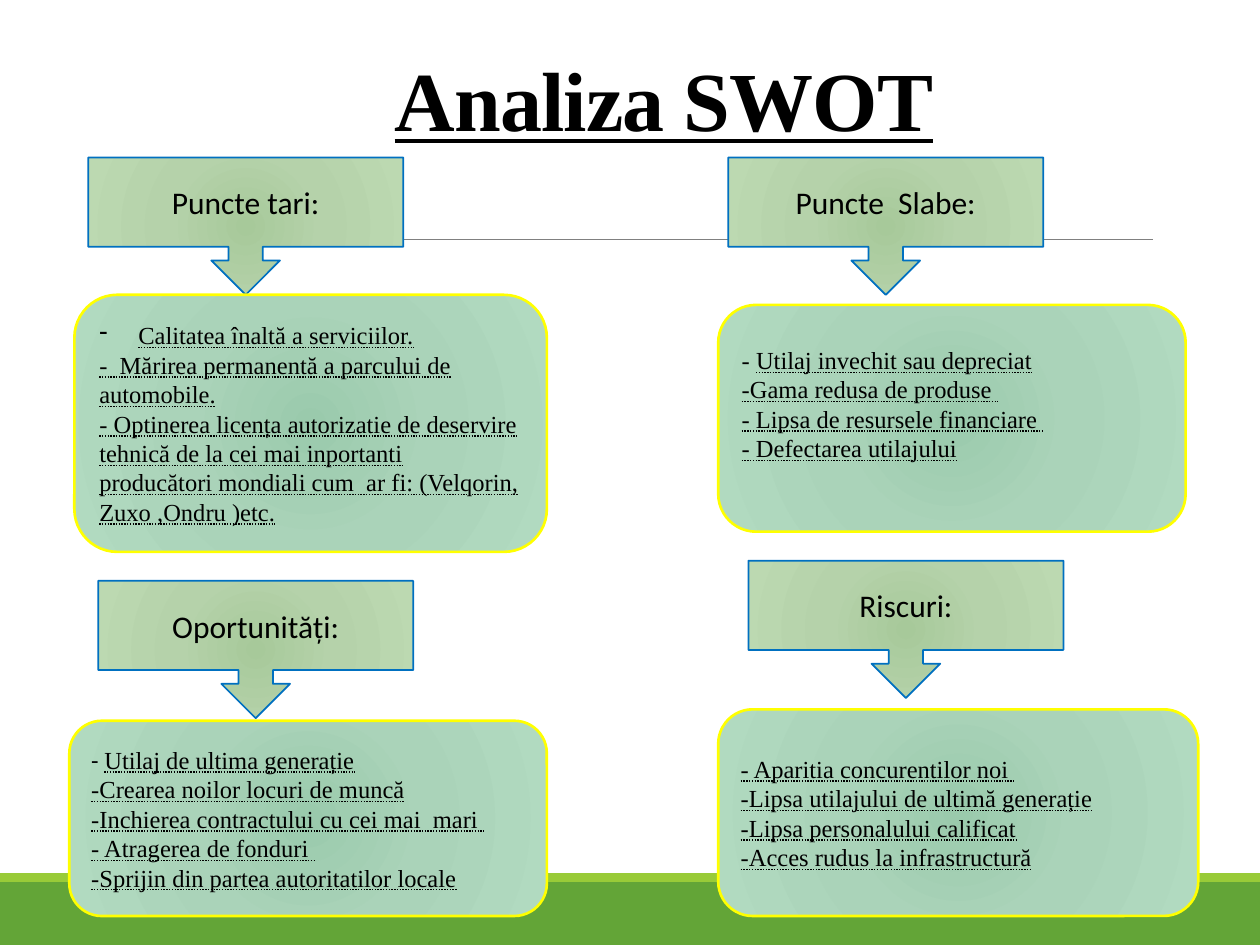
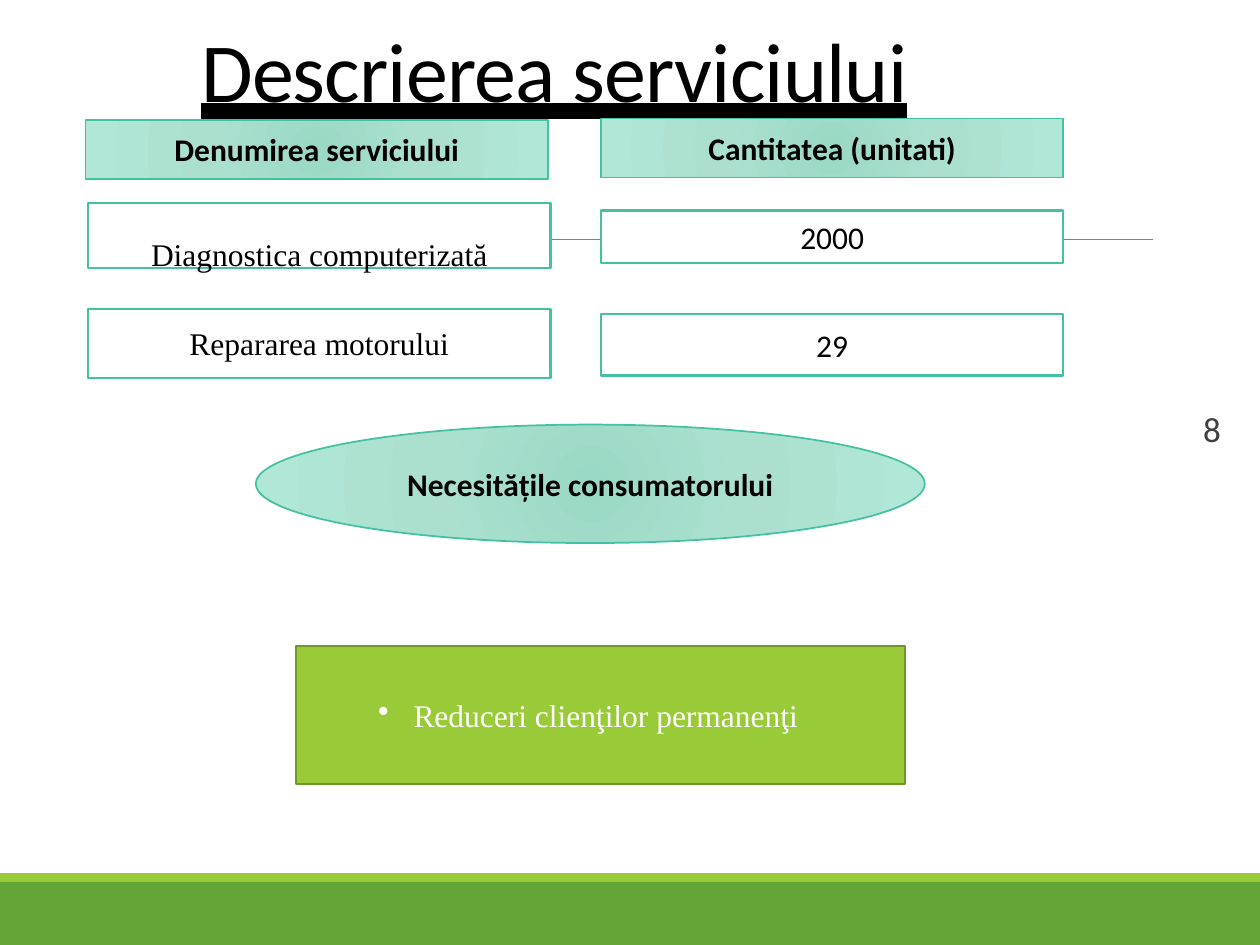
from lxml import etree
from pptx import Presentation
from pptx.dml.color import RGBColor
from pptx.enum.shapes import MSO_CONNECTOR, MSO_SHAPE as SHAPE
from pptx.enum.text import MSO_ANCHOR as ANCHOR, MSO_UNDERLINE as LINE, PP_ALIGN as ALIGN
from pptx.oxml.ns import qn
from pptx.util import Inches, Pt

BLACK = RGBColor(0x00, 0x00, 0x00)
WHITE = RGBColor(0xFF, 0xFF, 0xFF)
DARK_GREY = RGBColor(0x40, 0x40, 0x40)
RULE_GREY = RGBColor(0x80, 0x80, 0x80)
GREEN = RGBColor(0x63, 0xA5, 0x37)
LIME = RGBColor(0x99, 0xCB, 0x38)
DARK_LIME = RGBColor(0x71, 0x96, 0x29)
BLUE = RGBColor(0x00, 0x70, 0xC0)
YELLOW = RGBColor(0xFF, 0xFF, 0x00)
TEAL = RGBColor(0x44, 0xC1, 0xA3)

# Radial gradients, from the centre outwards
SAGE = [RGBColor(0xA7, 0xC9, 0x9A), RGBColor(0xB5, 0xD2, 0xAA), RGBColor(0xBC, 0xD9, 0xB1)]
MINT = [RGBColor(0x9A, 0xCA, 0xAC), RGBColor(0xAA, 0xD3, 0xB9), RGBColor(0xB1, 0xDA, 0xC0)]
AQUA = [RGBColor(0x9A, 0xD9, 0xC5), RGBColor(0xAB, 0xE0, 0xCF), RGBColor(0xB1, 0xE7, 0xD6)]
STOPS = [0, 45, 100]

SANS = "Calibri"
SERIF = "Times New Roman"


def fill_radial(sp, colors):
    sp.fill.gradient()
    old = sp.element.spPr.find(qn("a:gradFill"))
    grad = etree.Element(qn("a:gradFill"), rotWithShape="1")
    stops = etree.SubElement(grad, qn("a:gsLst"))
    for pos, color in zip(STOPS, colors):
        stop = etree.SubElement(stops, qn("a:gs"), pos=str(pos * 1000))
        etree.SubElement(stop, qn("a:srgbClr"), val=str(color))
    circle = etree.SubElement(grad, qn("a:path"), path="circle")
    etree.SubElement(circle, qn("a:fillToRect"), {side: "100000" for side in "ltrb"})
    sp.element.spPr.replace(old, grad)


def add_shape(slide, kind, box, fill, line=None, width=1):
    """Fill is one colour, or a list of colours for a radial gradient."""
    sp = slide.shapes.add_shape(kind, *map(Inches, box))
    sp.shadow.inherit = False
    if isinstance(fill, list):
        fill_radial(sp, fill)
    else:
        sp.fill.solid()
        sp.fill.fore_color.rgb = fill
    if line is None:
        sp.line.fill.background()
    else:
        sp.line.color.rgb = line
        sp.line.width = Pt(width)
    return sp


def write(sp, lines, size=18, font=SANS, color=BLACK, bold=False, underline=None,
          align=ALIGN.CENTER, anchor=ANCHOR.MIDDLE):
    tf = sp.text_frame
    tf.word_wrap = True
    tf.vertical_anchor = anchor
    for i, line in enumerate(lines):
        p = tf.paragraphs[0] if i == 0 else tf.add_paragraph()
        p.alignment = align
        p.font.size = Pt(size)
        p.font.name = font
        p.font.color.rgb = color
        p.font.bold = bold
        p.font.underline = underline
        p.add_run().text = line
    return tf


def set_bullet(p, char, margin, hang):
    pPr = p._p.get_or_add_pPr()
    pPr.set("marL", str(Inches(margin)))
    pPr.set("indent", str(-Inches(hang)))
    bullet = etree.Element(qn("a:buChar"), char=char)
    pPr.find(qn("a:defRPr")).addprevious(bullet)


def add_base(prs):
    """Blank slide with the footer bands and the thin rule."""
    slide = prs.slides.add_slide(prs.slide_layouts[6])
    add_shape(slide, SHAPE.RECTANGLE, (0, 7, 10, 0.5), GREEN)
    add_shape(slide, SHAPE.RECTANGLE, (0, 6.93, 10, 0.07), LIME)
    rule = slide.shapes.add_connector(
        MSO_CONNECTOR.STRAIGHT, Inches(0.98), Inches(1.9), Inches(9.15), Inches(1.9))
    rule.line.color.rgb = RULE_GREY
    rule.line.width = Pt(0.5)
    etree.SubElement(rule._element.spPr, qn("a:effectLst"))
    return slide


def add_title(slide, left, top, text, **style):
    sp = slide.shapes.add_textbox(Inches(left), Inches(top), Inches(8.5), Inches(1))
    p = write(sp, [text], size=48, anchor=ANCHOR.BOTTOM, **style).paragraphs[0]
    p.line_spacing = 0.85
    p.font._element.set("spc", "-50")


def add_callout(slide, left, top, label):
    sp = add_shape(slide, SHAPE.DOWN_ARROW_CALLOUT, (left, top, 2.5, 1.09), SAGE, BLUE)
    write(sp, [label])


def add_swot_list(slide, box, lines):
    sp = add_shape(slide, SHAPE.FLOWCHART_ALTERNATE_PROCESS, box, MINT, YELLOW, 1.5)
    return write(sp, lines, size=14, font=SERIF, underline=LINE.DOTTED_LINE, align=ALIGN.LEFT)


def add_plain_dash(p, font):
    """Put a dash that is not underlined before the paragraph's text."""
    text = p.runs[0].text
    p.runs[0].text = "- "
    p.runs[0].font.underline = False
    p.runs[0].font.name = font
    p.add_run().text = text


def build_swot(prs):
    slide = add_base(prs)
    add_title(slide, 1.02, 0.23, "Analiza SWOT", font=SERIF, bold=True, underline=True)
    for left, top, label in [(0.7, 1.25, "Puncte tari:"), (5.94, 4.45, "Riscuri:"),
                             (5.78, 1.25, "Puncte  Slabe:"), (0.78, 4.61, "Oportunități:")]:
        add_callout(slide, left, top, label)

    strengths = add_swot_list(slide, (0.59, 2.34, 3.75, 2.04), [
        "Calitatea înaltă a serviciilor.",
        "-  Mărirea permanentă a parcului de automobile.",
        "- Optinerea licența autorizatie de deservire tehnică de la cei mai inportanti "
        "producători mondiali cum  ar fi: (Velqorin, Zuxo ,Ondru )etc."])
    set_bullet(strengths.paragraphs[0], "-", 0.31, 0.31)

    add_swot_list(slide, (5.7, 5.63, 3.81, 1.64), [
        "- Aparitia concurentilor noi ",
        "-Lipsa utilajului de ultimă generație",
        "-Lipsa personalului calificat",
        "-Acces rudus la infrastructură"])

    chances = add_swot_list(slide, (0.55, 5.72, 3.79, 1.55), [
        "Utilaj de ultima generație",
        "-Crearea noilor locuri de muncă",
        "-Inchierea contractului cu cei mai  mari ",
        "- Atragerea de fonduri ",
        "-Sprijin din partea autoritatilor locale"])
    add_plain_dash(chances.paragraphs[0], SANS)

    weaknesses = add_swot_list(slide, (5.7, 2.42, 3.71, 1.8), [
        "Utilaj invechit sau depreciat",
        "-Gama redusa de produse ",
        "- Lipsa de resursele financiare ",
        "- Defectarea utilajului"])
    add_plain_dash(weaknesses.paragraphs[0], SERIF)
    weaknesses.margin_bottom = Inches(0.28)


def add_heading(slide, kind, box, text):
    write(add_shape(slide, kind, box, AQUA, TEAL), [text], bold=True)


def add_cell(slide, left, top, height, text, font):
    sp = add_shape(slide, SHAPE.RECTANGLE, (left, top, 3.67, height), WHITE, TEAL, 1.25)
    return write(sp, [text], font=font)


def add_page_number(slide, number):
    sp = slide.shapes.add_textbox(Inches(8.69), Inches(3.15), Inches(1), Inches(0.5))
    tf = write(sp, [number], size=20, color=DARK_GREY, align=ALIGN.RIGHT)
    tf.margin_right = 0


def build_service(prs):
    slide = add_base(prs)
    add_title(slide, 1.5, 0, "Descrierea serviciului", underline=LINE.HEAVY_LINE,
              align=ALIGN.LEFT)
    add_page_number(slide, "8")

    add_heading(slide, SHAPE.RECTANGLE, (0.68, 0.95, 3.67, 0.47), "Denumirea serviciului")
    add_heading(slide, SHAPE.RECTANGLE, (4.77, 0.94, 3.67, 0.47), "Cantitatea (unitati)")
    diagnostics = add_cell(slide, 0.7, 1.61, 0.52, "Diagnostica computerizată", SERIF)
    diagnostics.margin_top = Inches(0.34)
    add_cell(slide, 4.77, 1.67, 0.42, "2000", SANS)
    add_cell(slide, 0.7, 2.45, 0.55, "Repararea motorului", SERIF)
    add_cell(slide, 4.77, 2.49, 0.49, "29", SANS)

    add_heading(slide, SHAPE.OVAL, (2.03, 3.37, 5.31, 0.94), "Necesitățile consumatorului")
    offer = add_shape(slide, SHAPE.ROUNDED_RECTANGLE, (2.35, 5.13, 4.83, 1.09),
                      LIME, DARK_LIME, 1.25)
    offer.adjustments[0] = 0
    tf = write(offer, ["Reduceri clienţilor permanenţi"], font=SERIF, color=WHITE)
    set_bullet(tf.paragraphs[0], "•", 0.08, 0.28)


def main():
    prs = Presentation()
    prs.slide_width, prs.slide_height = Inches(10), Inches(7.5)
    build_swot(prs)
    build_service(prs)
    prs.save("out.pptx")


if __name__ == "__main__":
    main()
